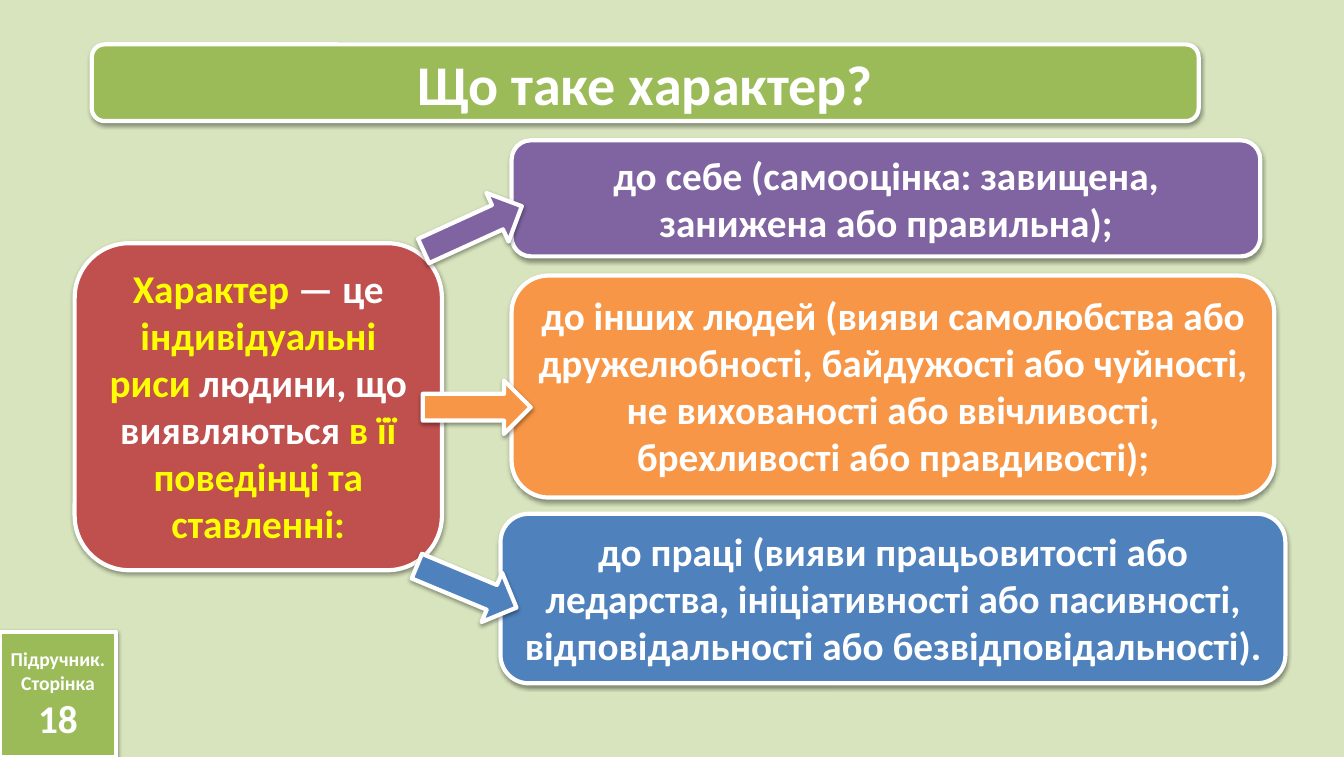
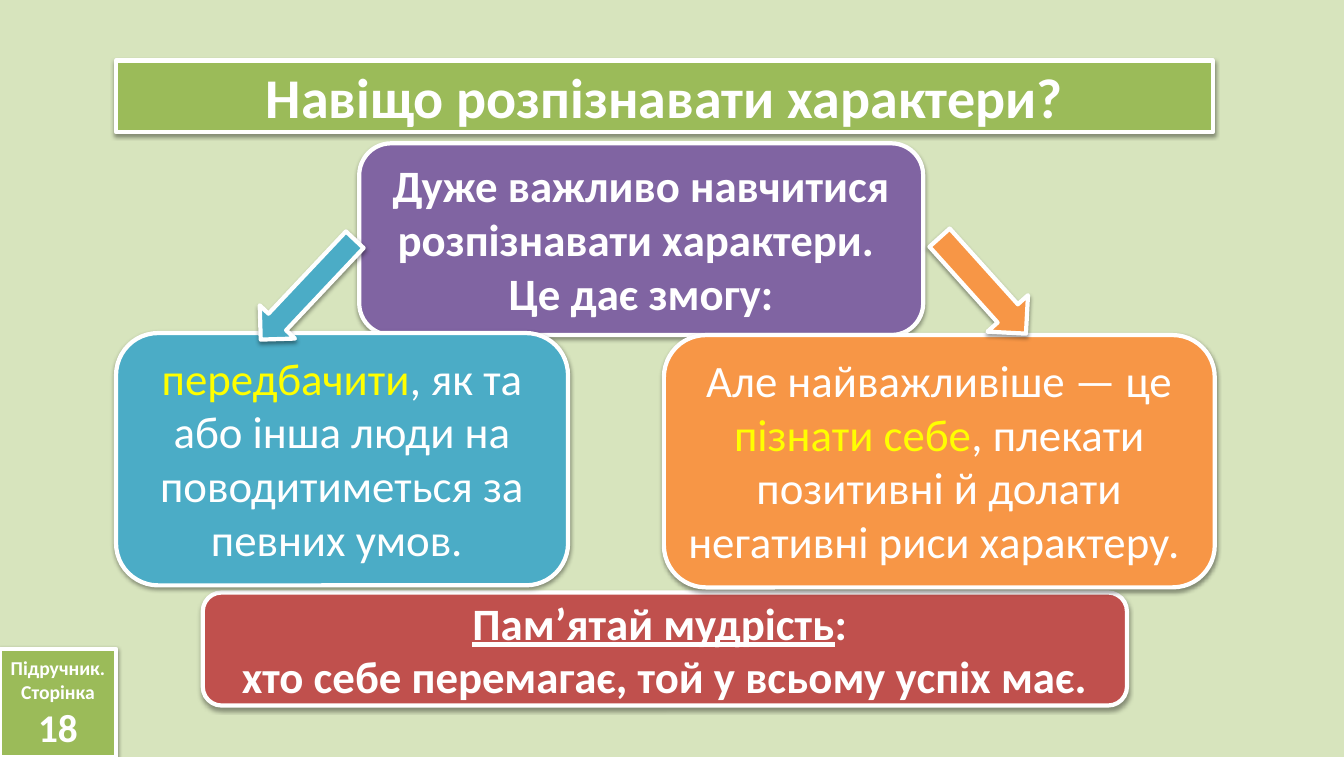
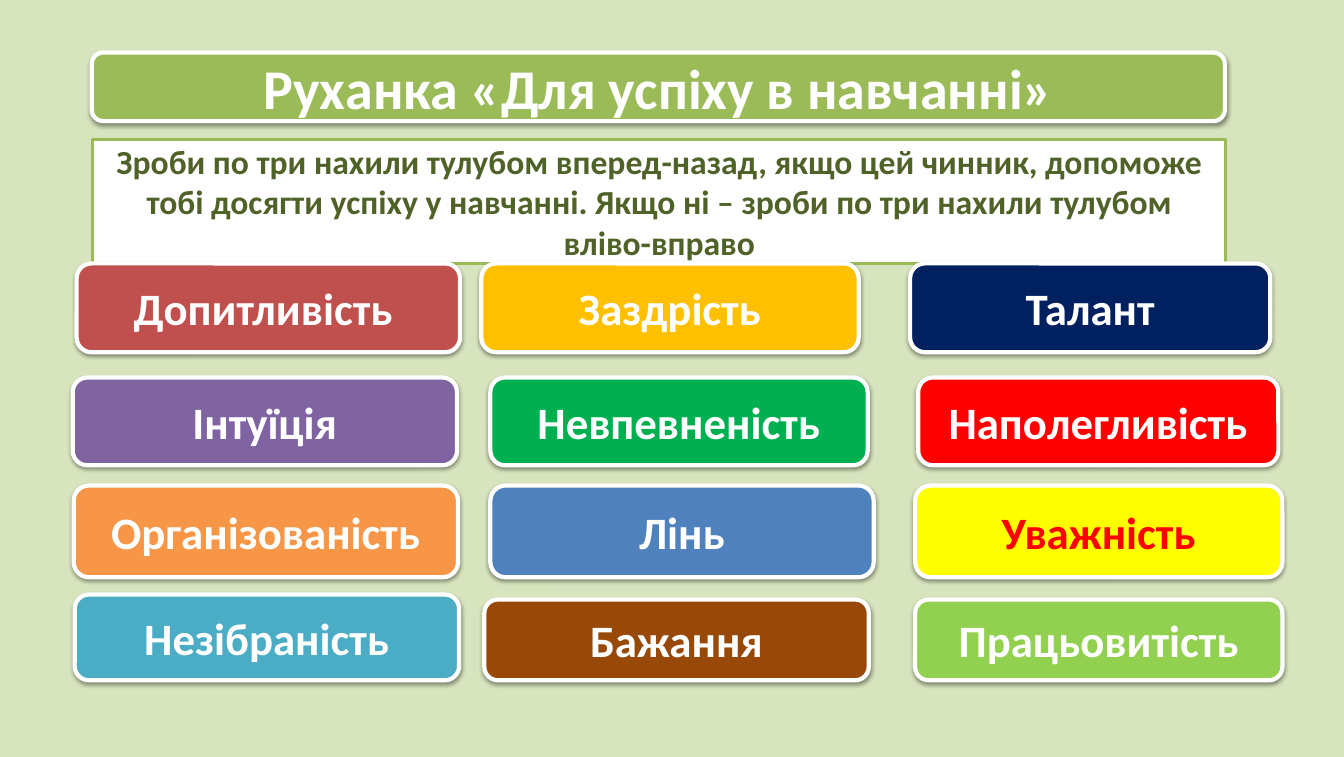
from lxml import etree
from pptx import Presentation
from pptx.dml.color import RGBColor
from pptx.enum.shapes import MSO_SHAPE
from pptx.enum.text import MSO_ANCHOR, MSO_AUTO_SIZE, PP_ALIGN
from pptx.oxml.ns import qn
from pptx.util import Inches, Pt

RECT = MSO_SHAPE.RECTANGLE
ROUNDED = MSO_SHAPE.ROUNDED_RECTANGLE
RIGHT_ARROW = MSO_SHAPE.RIGHT_ARROW
DOWN_ARROW = MSO_SHAPE.DOWN_ARROW
TOP = MSO_ANCHOR.TOP
MIDDLE = MSO_ANCHOR.MIDDLE
CENTER = PP_ALIGN.CENTER
GROW = MSO_AUTO_SIZE.SHAPE_TO_FIT_TEXT

FONT = "Calibri"
COLORS = {
    "background": "D7E4BD",
    "white": "FFFFFF",
    "olive": "9BBB59",
    "moss": "4F6228",
    "brick": "C0504D",
    "purple": "8064A2",
    "orange": "F79646",
    "blue": "4F81BD",
    "teal": "4BACC6",
    "yellow": "FFFF00",
    "red": "FF0000",
    "gold": "FFC000",
    "navy": "002060",
    "green": "00B050",
    "lime": "92D050",
    "brown": "984807",
}


def rgb(color):
    """Return the named palette colour."""
    return RGBColor.from_string(COLORS[color])


def add_shadow(shape):
    """Give a shape the soft shadow that falls straight down."""
    effects = shape._element.spPr.find(qn("a:effectLst"))
    shadow = etree.SubElement(
        effects, qn("a:outerShdw"), blurRad=str(Pt(3.1)), dist=str(Pt(1.6)),
        dir="5400000", rotWithShape="0")
    tint = etree.SubElement(shadow, qn("a:srgbClr"), val="000000")
    etree.SubElement(tint, qn("a:alpha"), val="38000")


def add_block(slide, kind, box, fill, line="white", width=3, shadow=True, rotation=0):
    """Add a filled and outlined shape at left, top, width, height."""
    shape = slide.shapes.add_shape(kind, *(Inches(length) for length in box))
    shape.rotation = rotation
    shape.fill.solid()
    shape.fill.fore_color.rgb = rgb(fill)
    shape.line.color.rgb = rgb(line)
    shape.line.width = Pt(width)
    shape.shadow.inherit = False
    if shadow:
        add_shadow(shape)
    return shape


def write(shape, paragraphs, sizes, bold=True, color="white", grow=False):
    """Fill a shape with centred paragraphs of (text, colour, underline) runs."""
    frame = shape.text_frame
    frame.word_wrap = True
    frame.vertical_anchor = TOP if grow else MIDDLE
    if grow:
        frame.auto_size = GROW
    for index, (pieces, size) in enumerate(zip(paragraphs, sizes)):
        paragraph = frame.add_paragraph() if index else frame.paragraphs[0]
        paragraph.alignment = CENTER
        for text, run_color, underline in pieces:
            run = paragraph.add_run()
            run.text = text
            run.font.name = FONT
            run.font.size = Pt(size)
            run.font.bold = bold
            run.font.underline = underline
            run.font.color.rgb = rgb(run_color or color)


def piece(text, color=None, underline=False):
    """Describe one run of text."""
    return text, color, underline


def add_title(slide, text, box, kind=ROUNDED):
    """Add the olive title band."""
    write(add_block(slide, kind, box, "olive"), [[piece(text)]], [40])


def add_page_badge(slide, top):
    """Add the textbook page badge that stands on the bottom left corner."""
    badge = add_block(slide, RECT, (0, top, 1.15, 7.5 - top), "olive")
    lines = ["Підручник.", "Сторінка", "18"]
    write(badge, [[piece(line)] for line in lines], [14, 14, 28])


def add_card(slide, box, fill, paragraphs, size, bold=True, grow=True):
    """Add a rounded card with text of one size."""
    card = add_block(slide, ROUNDED, box, fill)
    write(card, paragraphs, [size] * len(paragraphs), bold, grow=grow)


def build_definition(slide):
    """Show what character is and the three attitudes it appears in."""
    add_page_badge(slide, 6.26)
    add_title(slide, "Що таке характер?", (0.91, 0.44, 10.97, 0.76))
    definition = [
        piece("Характер", "yellow"),
        piece(" — це "),
        piece("індивідуальні риси ", "yellow"),
        piece("людини, що виявляються "),
        piece("в її поведінці та ставленні:", "yellow"),
    ]
    add_card(slide, (0.74, 2.41, 3.64, 3.24), "brick", [definition], 28)
    attitudes = [
        ("до себе (самооцінка: завищена, занижена або правильна);",
         "purple", (5.07, 1.39, 7.42, 1.15), (4.15, 2), 335.5),
        ("до інших людей (вияви самолюбства або дружелюбності, байдужості або "
         "чуйності, не вихованості або ввічливості, брехливості або правдивості);",
         "orange", (5.07, 2.73, 7.56, 2.2), (4.19, 3.77), 0),
        ("до праці (вияви працьовитості або ледарства, ініціативності або "
         "пасивності, відповідальності або безвідповідальності).",
         "blue", (4.96, 5.09, 7.78, 1.68), (4.09, 5.55), 22.6),
    ]
    for text, fill, box, _, _ in attitudes:
        add_card(slide, box, fill, [[piece(text)]], 28)
    for _, fill, _, corner, rotation in attitudes:
        add_block(slide, RIGHT_ARROW, (*corner, 1.07, 0.53), fill, rotation=rotation)


def build_reasons(slide):
    """Show why recognising characters matters."""
    add_title(slide, "Навіщо розпізнавати характери?", (1.15, 0.6, 10.87, 0.71), RECT)
    importance = [
        [piece("Дуже важливо навчитися розпізнавати характери. ")],
        [piece("Це дає змогу:")],
    ]
    add_card(slide, (3.56, 1.42, 5.59, 1.9), "purple", importance, 32)
    add_page_badge(slide, 6.43)
    wisdom = [
        [piece("Пам’ятай мудрість", underline=True), piece(": ")],
        [piece("хто себе перемагає, той у всьому успіх має.")],
    ]
    add_card(slide, (2.01, 5.87, 9.16, 1.12), "brick", wisdom, 32, grow=False)
    foresight = [
        piece("передбачити", "yellow"),
        piece(", як та або інша люди на поводитиметься за певних умов. "),
    ]
    add_card(slide, (1.15, 3.3, 4.48, 2.5), "teal", [foresight], 32, bold=False)
    self_knowledge = [
        piece("Але найважливіше — це "),
        piece("пізнати себе", "yellow"),
        piece(", плекати позитивні й долати негативні риси характеру. "),
    ]
    add_card(slide, (6.58, 3.32, 5.46, 2.5), "orange", [self_knowledge], 32, bold=False)
    add_block(slide, DOWN_ARROW, (2.81, 2.19, 0.48, 1.36), "teal", rotation=43.3)
    add_block(slide, DOWN_ARROW, (9.47, 2.19, 0.54, 1.28), "orange", rotation=318)


def build_exercise(slide):
    """Show the warm-up rule and the factors to judge."""
    rule = add_block(slide, RECT, (0.92, 1.38, 11.23, 1.23), "white", "olive", 2, False)
    write(rule, [[piece(
        "Зроби по три нахили тулубом вперед-назад, якщо цей чинник, допоможе "
        "тобі досягти успіху у навчанні. Якщо ні – зроби по три нахили тулубом "
        "вліво-вправо")]], [24], color="moss")
    factor_rows = [
        (2.61, 0.88, [("Допитливість ", "brick", 0.76, 3.8),
                      ("Заздрість", "gold", 4.77, 3.74),
                      ("Талант", "navy", 9.02, 3.57)]),
        (3.74, 0.87, [("Інтуїція", "purple", 0.72, 3.81),
                      ("Невпевненість", "green", 4.86, 3.74),
                      ("Наполегливість", "red", 9.1, 3.57)]),
        (4.81, 0.91, [("Організованість", "orange", 0.73, 3.81),
                      ("Лінь", "blue", 4.86, 3.8),
                      ("Уважність", "yellow", 9.07, 3.64)]),
        (5.89, 0.85, [("Незібраність", "teal", 0.74, 3.81)]),
        (5.94, 0.8, [("Бажання", "brown", 4.8, 3.81),
                     ("Працьовитість", "lime", 9.07, 3.64)]),
    ]
    for top, height, factors in factor_rows:
        for factor, fill, left, width in factors:
            color = "red" if fill == "yellow" else "white"
            add_card(slide, (left, top, width, height), fill,
                     [[piece(factor, color)]], 32, grow=False)
    add_title(slide, "Руханка «Для успіху в навчанні»", (0.91, 0.52, 11.23, 0.68))


def main():
    """Build and save the presentation."""
    deck = Presentation()
    deck.slide_width = Inches(13.32)
    deck.slide_height = Inches(7.5)
    backdrop = deck.slide_master.background.fill
    backdrop.solid()
    backdrop.fore_color.rgb = rgb("background")
    for build in (build_definition, build_reasons, build_exercise):
        build(deck.slides.add_slide(deck.slide_layouts[6]))
    deck.save("out.pptx")


if __name__ == "__main__":
    main()
